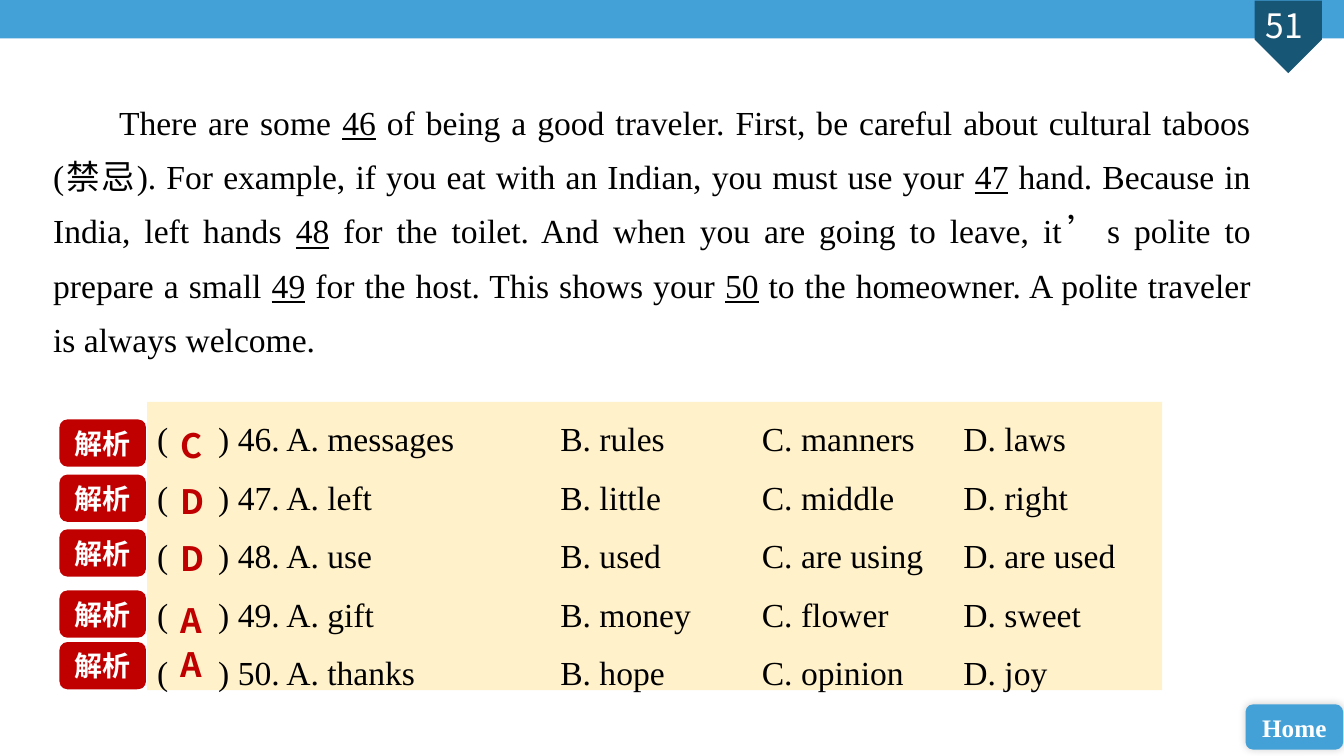
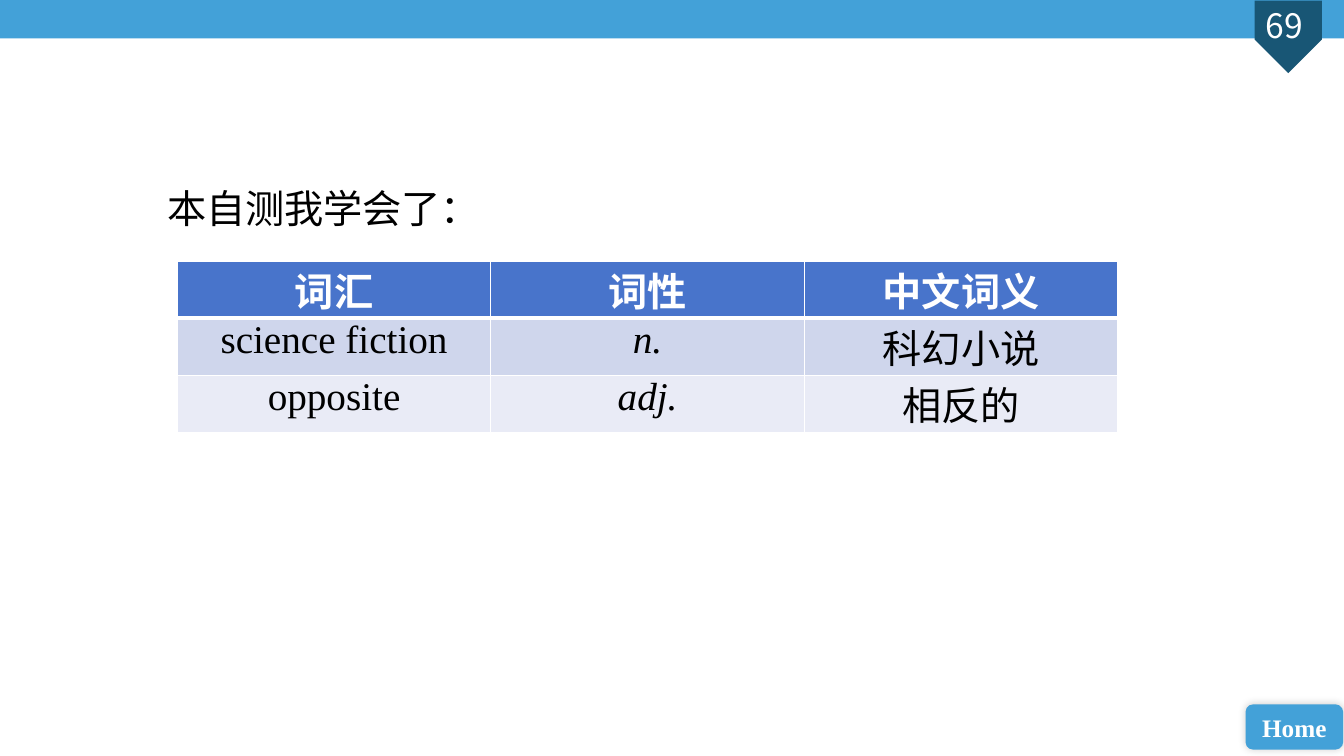
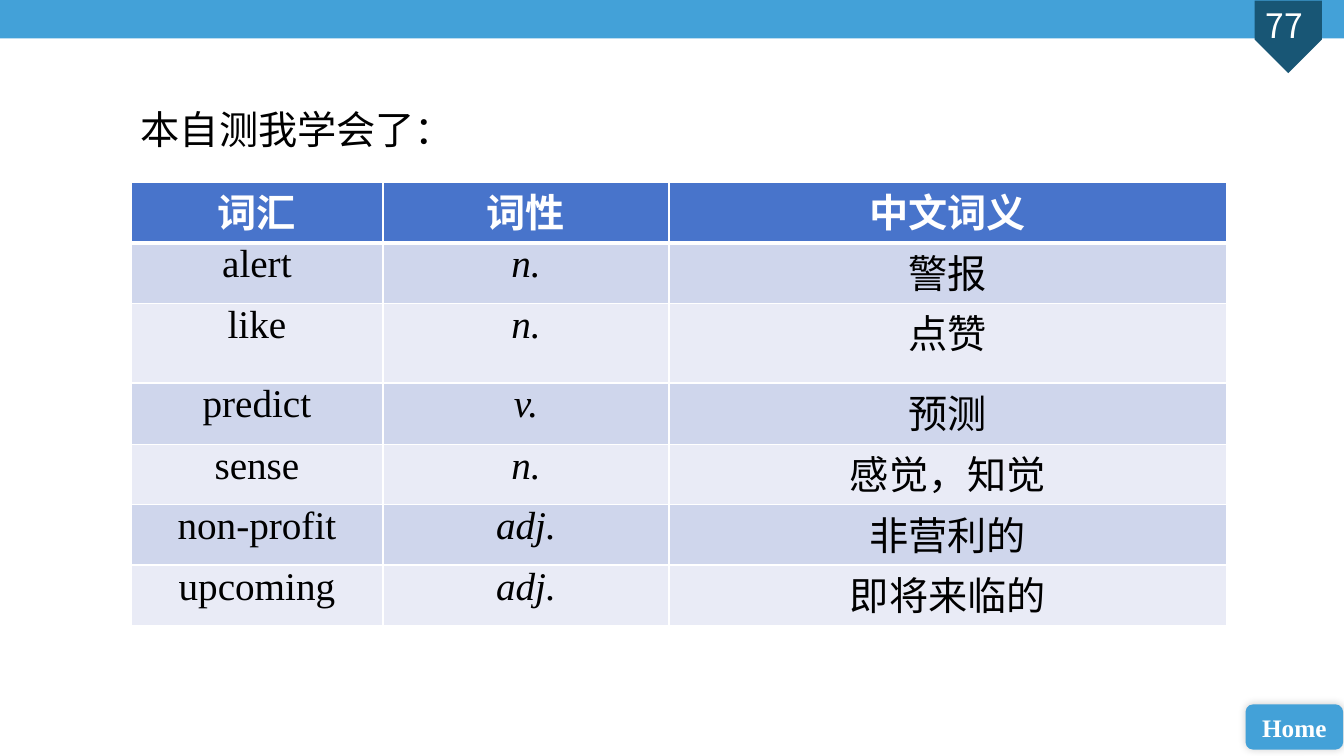
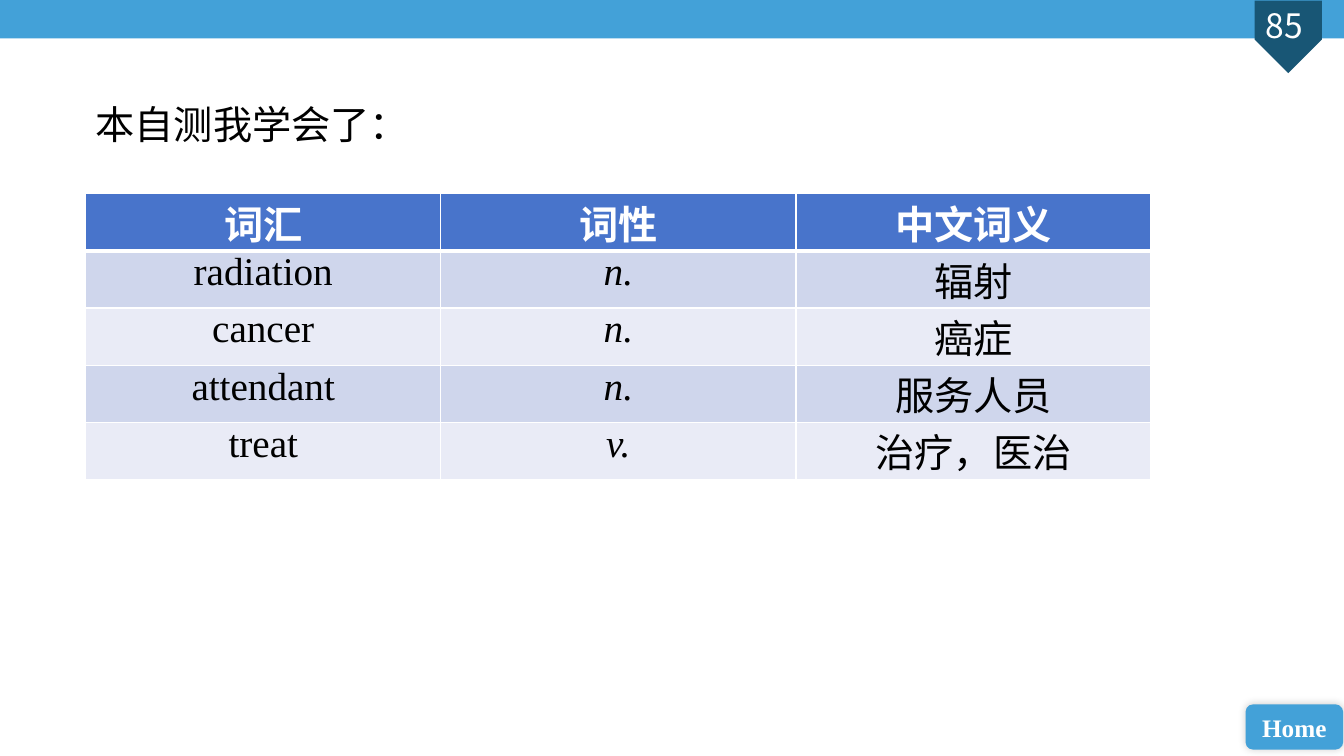
from lxml import etree
from pptx import Presentation
from pptx.dml.color import RGBColor
from pptx.enum.shapes import MSO_SHAPE
from pptx.enum.text import MSO_ANCHOR, MSO_AUTO_SIZE, PP_ALIGN
from pptx.oxml.ns import qn
from pptx.util import Cm, Pt

RECTANGLE, ROUNDED = MSO_SHAPE.RECTANGLE, MSO_SHAPE.ROUNDED_RECTANGLE
PENTAGON = MSO_SHAPE.PENTAGON
MIDDLE, TOP = MSO_ANCHOR.MIDDLE, MSO_ANCHOR.TOP
LEFT, CENTER, JUSTIFY = PP_ALIGN.LEFT, PP_ALIGN.CENTER, PP_ALIGN.JUSTIFY
GROW = MSO_AUTO_SIZE.SHAPE_TO_FIT_TEXT

SERIF, SANS, CJK = "Times New Roman", "Calibri", "Noto Sans CJK SC"
BLUE, NAVY, RED, CREAM = "43A1D8", "185675", "C00000", "FFF2CA"
BLACK, WHITE = "000000", "FFFFFF"
HEADER_FILL, BODY_FILLS = "4874CB", ("CFD6EC", "E9EBF6")

WIDTH, HEIGHT = 33.87, 19.05
HEADINGS = ("词汇", "词性", "中文词义")

PASSAGE = (
    "There are some ", "46",
    " of being a good traveler. First, be careful about cultural taboos (禁忌). "
    "For example, if you eat with an Indian, you must use your ", "47",
    " hand. Because in India, left hands ", "48",
    " for the toilet. And when you are going to leave, it", "’",
    "s polite to prepare a small ", "49", " for the host. This shows your ", "50",
    " to the homeowner. A polite traveler is always welcome.",
)

# Question number, options, answer, top of the answer, top of the button
QUESTIONS = (
    (46, ("messages", "rules", "manners", "laws"), "C", 10.57, 10.57),
    (47, ("left", "little", "middle", "right"), "D", 11.99, 11.96),
    (48, ("use", "used", "are using", "are used"), "D", 13.44, 13.34),
    (49, ("gift", "money", "flower", "sweet"), "A", 14.99, 14.88),
    (50, ("thanks", "hope", "opinion", "joy"), "A", 16.1, 16.18),
)

# Page number, title position, table position, column widths, row heights, words
VOCABULARY = (
    (69, (3.96, 4.52), (4.47, 6.58), (7.9,) * 3, (1.44,) * 3, (
        ("science fiction", "n.", "科幻小说"),
        ("opposite", "adj.", "相反的"),
    )),
    (77, (3.3, 2.54), (3.3, 4.6), (6.35, 7.21, 14.05),
     (1.52, 1.52, 2.01, 1.55, 1.52, 1.52, 1.52), (
        ("alert", "n.", "警报"),
        ("like", "n.", "点赞"),
        ("predict", "v.", "预测"),
        ("sense", "n.", "感觉，知觉"),
        ("non-profit", "adj.", "非营利的"),
        ("upcoming", "adj.", "即将来临的"),
    )),
    (85, (2.16, 2.41), (2.16, 4.88), (8.95,) * 3, (1.44,) * 5, (
        ("radiation", "n.", "辐射"),
        ("cancer", "n.", "癌症"),
        ("attendant", "n.", "服务人员"),
        ("treat", "v.", "治疗，医治"),
    )),
)


def color(hex_value):
    return RGBColor.from_string(hex_value)


def add_run(paragraph, text, size, font, ink, **styles):
    run = paragraph.add_run()
    run.text = text
    formats = {"size": Pt(size), "name": font, "bold": False, **styles}
    for name, value in formats.items():
        setattr(run.font, name, value)
    run.font.color.rgb = color(ink)
    east_asian = etree.SubElement(run.font._element, qn("a:ea"))
    east_asian.set("typeface", CJK)


def add_block(slide, kind, box, fill):
    shape = slide.shapes.add_shape(kind, *map(Cm, box))
    shape.shadow.inherit = False
    shape.fill.solid()
    shape.fill.fore_color.rgb = color(fill)
    shape.line.fill.background()
    return shape


def add_button(slide, box, fill, text, size, font):
    button = add_block(slide, ROUNDED, box, fill)
    frame = button.text_frame
    frame.vertical_anchor = MIDDLE
    frame.word_wrap = False
    paragraph = frame.paragraphs[0]
    paragraph.alignment = CENTER
    add_run(paragraph, text, size, font, WHITE, bold=True)
    return button


def add_text_box(slide, box, align=LEFT, wrap=True):
    """Add a growing text box and return its first paragraph."""
    frame = slide.shapes.add_textbox(*map(Cm, box)).text_frame
    frame.word_wrap = wrap
    frame.auto_size = GROW
    paragraph = frame.paragraphs[0]
    paragraph.alignment = align
    return paragraph


def add_soft_shadow(shape):
    effects = shape._element.spPr.find(qn("a:effectLst"))
    shadow = etree.SubElement(effects, qn("a:outerShdw"), blurRad=str(Pt(6)),
                              dist="0", dir="18900000", rotWithShape="0")
    tint = etree.SubElement(shadow, qn("a:srgbClr"), val=BLACK)
    etree.SubElement(tint, qn("a:alpha"), val="20000")


def add_page(presentation, number):
    """Add a slide with the top band, the page marker and the home button."""
    slide = presentation.slides.add_slide(presentation.slide_layouts[6])
    add_block(slide, RECTANGLE, (0, 0, WIDTH, 0.97), BLUE)
    marker = add_block(slide, PENTAGON, (31.55, 0.08, 1.83, 1.7), NAVY)
    marker.rotation = 90
    label = add_text_box(slide, (31.22, 0, 2.49, 1.27), CENTER)
    add_run(label, f"{number} ", 24, CJK, WHITE)
    home = add_button(slide, (31.39, 17.75, 2.46, 1.14), BLUE, "Home", 18, SERIF)
    add_soft_shadow(home)
    return slide


def add_passage(slide, box):
    paragraph = add_text_box(slide, box, JUSTIFY)
    paragraph.line_spacing = 1.35
    paragraph._p.get_or_add_pPr().set("indent", str(Cm(1.66)))
    for text in PASSAGE:
        font = CJK if text == "’" else SERIF
        add_run(paragraph, text, 24, font, BLACK, underline=text.isdigit())


def add_tab_stops(paragraph, positions):
    tabs = etree.SubElement(paragraph._p.get_or_add_pPr(), qn("a:tabLst"))
    for position in positions:
        etree.SubElement(tabs, qn("a:tab"), pos=str(Cm(position)), algn="l")


def add_questions(slide, box):
    left = box[0]
    frame = add_block(slide, RECTANGLE, box, CREAM).text_frame
    frame.vertical_anchor = MIDDLE
    for index, (number, options, answer, answer_top, button_top) in enumerate(QUESTIONS):
        paragraph = frame.paragraphs[0] if index == 0 else frame.add_paragraph()
        paragraph.alignment = LEFT
        paragraph.line_spacing = 1.45
        add_tab_stops(paragraph, (1.54, 10.16, 15.24, 20.32))
        choices = "\t".join(f"{letter}. {option}" for letter, option in zip("ABCD", options))
        add_run(paragraph, f"(\t) {number}. {choices}", 24, SERIF, BLACK)

        key = add_text_box(slide, (left + 0.58, answer_top, 1.15, 1.27), wrap=False)
        add_run(key, answer, 24, CJK, RED, bold=True)
        add_button(slide, (left - 2.21, button_top, 2.18, 1.19), RED, "解析", 20, SANS)


def add_borders(cell, widths):
    """Draw white borders, with widths in points keyed by side."""
    properties = cell._tc.get_or_add_tcPr()
    for side, width in widths.items():
        line = etree.SubElement(properties, qn(f"a:ln{side}"), w=str(Pt(width)))
        fill = etree.SubElement(line, qn("a:solidFill"))
        etree.SubElement(fill, qn("a:srgbClr"), val=WHITE)


def fill_cell(cell, text, row, column):
    is_header = row == 0
    add_borders(cell, {"L": 1, "R": 1, "T": 3 if row == 1 else 1, "B": 3 if is_header else 1})
    cell.fill.solid()
    cell.fill.fore_color.rgb = color(HEADER_FILL if is_header else BODY_FILLS[(row - 1) % 2])
    cell.vertical_anchor = TOP
    for side in ("left", "right", "top", "bottom"):
        setattr(cell, f"margin_{side}", 0)
    paragraph = cell.text_frame.paragraphs[0]
    paragraph.alignment = CENTER
    add_run(paragraph, text, 28, SERIF, WHITE if is_header else BLACK,
            bold=is_header, italic=column == 1 and not is_header)


def add_word_table(slide, position, widths, heights, words):
    box = (*position, sum(widths), sum(heights))
    table = slide.shapes.add_table(len(heights), len(widths), *map(Cm, box)).table
    for column, width in zip(table.columns, widths):
        column.width = Cm(width)
    for row, height in zip(table.rows, heights):
        row.height = Cm(height)
    for row, texts in enumerate((HEADINGS, *words)):
        for column, text in enumerate(texts):
            fill_cell(table.cell(row, column), text, row, column)


def add_quiz_slide(presentation):
    slide = add_page(presentation, 51)
    add_passage(slide, (1.09, 2.08, 30.68, 6.91))
    add_questions(slide, (3.71, 10.13, 25.58, 7.26))


def add_vocabulary_slide(presentation, number, title_position, *table_parts):
    slide = add_page(presentation, number)
    add_word_table(slide, *table_parts)
    title = add_text_box(slide, (*title_position, 9.83, 1.45))
    add_run(title, "本自测我学会了：", 28, SANS, BLACK)


def main():
    presentation = Presentation()
    presentation.slide_width, presentation.slide_height = Cm(WIDTH), Cm(HEIGHT)
    add_quiz_slide(presentation)
    for lesson in VOCABULARY:
        add_vocabulary_slide(presentation, *lesson)
    presentation.save("out.pptx")


if __name__ == "__main__":
    main()
